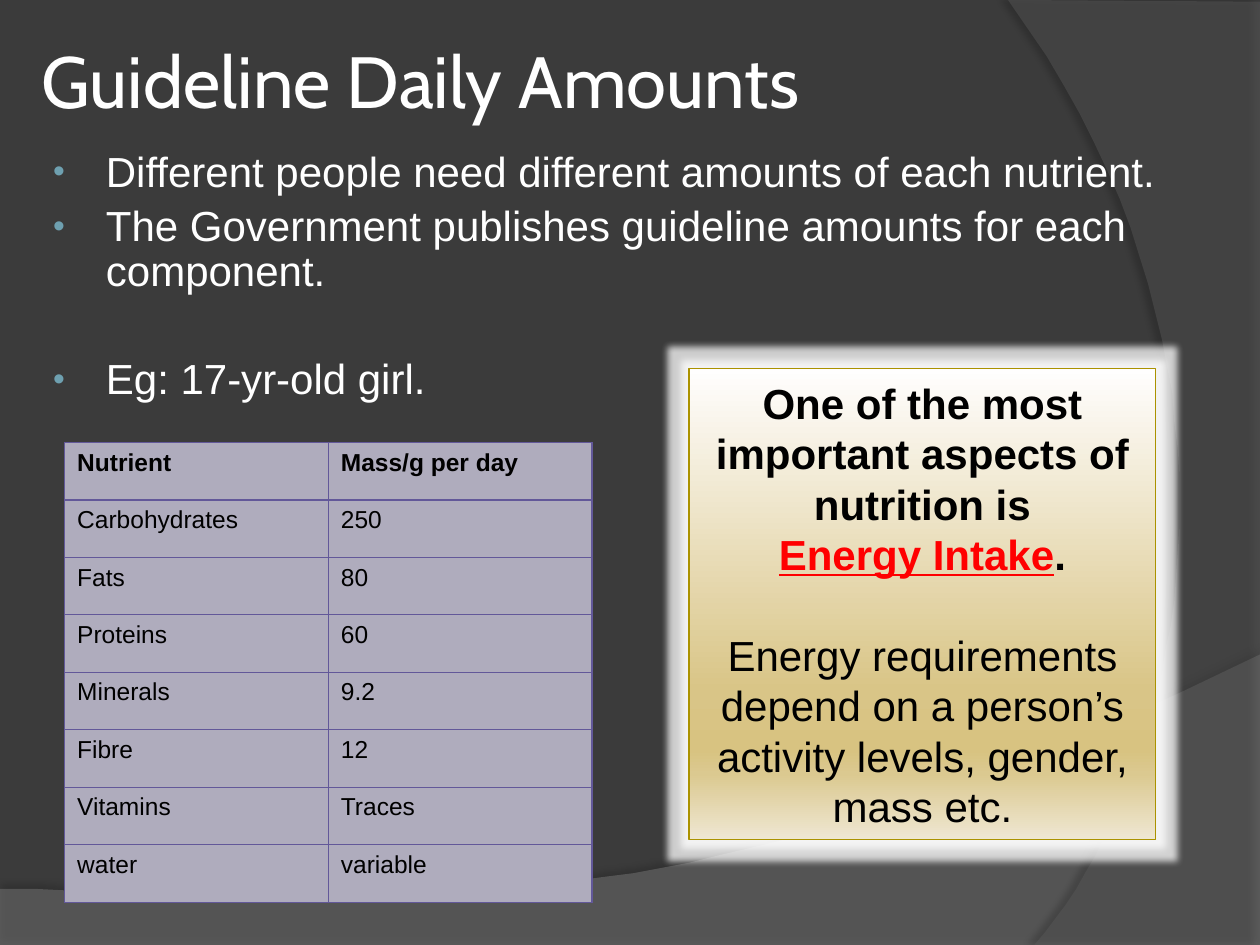
from lxml.etree import SubElement
from pptx import Presentation
from pptx.dml.color import RGBColor
from pptx.enum.shapes import MSO_SHAPE
from pptx.enum.text import MSO_ANCHOR, MSO_AUTO_SIZE, PP_ALIGN
from pptx.oxml import parse_xml
from pptx.oxml.ns import nsdecls, qn
from pptx.util import Pt


def color(value):
    return RGBColor.from_string(value)


def add_span(para, text, **formats):
    """Add a run; formats are font attributes, with ink as its colour."""
    span = para.add_run()
    span.text = text
    span.font.color.rgb = color(formats.pop("ink"))
    for name, value in ({"name": "Arial", "size": Pt(24)} | formats).items():
        setattr(span.font, name, value)


deck = Presentation()
deck.slide_width, deck.slide_height = Pt(720), Pt(540)
page = deck.slides.add_slide(deck.slide_layouts[1])
page.background.fill.solid()
page.background.fill.fore_color.rgb = color("3B3B3B")

# Background swooshes: start, two control points and end of the curve, then corners
swooshes = [
    ([(720, 374.4), (402.5, 524.9), (281.5, 517.7), (0, 507.6)],
     [(0, 540), (720, 540)], "7F7F7F", 45, (35, 3.5, 270)),
    ([(591, 540), (673.2, 445.7), (733, 216), (576, 0)],
     [(720, 1.4), (720, 540)], "5E5E5E", 40, (45, 4, 180)),
]
steps = 40
for index, (controls, corners, fill, opacity, shadow) in enumerate(swooshes):
    curve = []
    for step in range(steps + 1):
        t = step / steps
        weights = [(1 - t) ** 3, 3 * t * (1 - t) ** 2, 3 * t * t * (1 - t), t ** 3]
        curve.append([sum(w * point[axis] for w, point in zip(weights, controls))
                      for axis in (0, 1)])
    builder = page.shapes.build_freeform(*curve[0], scale=Pt(1))
    builder.add_line_segments(curve[1:] + corners, close=True)
    swoosh = builder.convert_to_shape()
    swoosh.fill.solid()
    swoosh.fill.fore_color.rgb = color(fill)
    swoosh.line.fill.background()
    tint = swoosh._element.spPr.find(qn("a:solidFill"))[0]
    SubElement(tint, qn("a:alpha"), val=str(opacity * 1000))
    shade, distance, angle = shadow
    swoosh._element.spPr.append(parse_xml(
        f'<a:effectLst {nsdecls("a")}><a:outerShdw blurRad="{Pt(4)}" '
        f'dist="{Pt(distance)}" dir="{angle * 60000}"><a:srgbClr val="000000">'
        f'<a:alpha val="{shade * 1000}"/></a:srgbClr></a:outerShdw></a:effectLst>'))
    page.shapes._spTree.insert(2 + index, swoosh._element)

# Title and list placeholders
title, body = page.shapes.title, page.placeholders[1]
for holder, top, height in ((title, 15.1, 61.2), (body, 82.8, 442)):
    holder.left, holder.top, holder.width, holder.height = map(
        Pt, (20.2, top, 680.4, height))
    holder.text_frame.word_wrap = True
    holder.text_frame.auto_size = MSO_AUTO_SIZE.NONE

frame = title.text_frame
frame.vertical_anchor = MSO_ANCHOR.MIDDLE
for side in ("left", "top", "right", "bottom"):
    setattr(frame, f"margin_{side}", Pt(3.6))
frame.paragraphs[0].alignment = PP_ALIGN.LEFT
add_span(frame.paragraphs[0], "Guideline Daily Amounts",
         name="Cabin", size=Pt(41.4), ink="FFFFFF")

points = [
    ("Different people need different amounts of each nutrient.", 5),
    ("The Government publishes guideline amounts for each component.", 5),
    ("Eg: 17-yr-old girl.", 35.8),
]
frame = body.text_frame
for index, (text, gap) in enumerate(points):
    para = frame.add_paragraph() if index else frame.paragraphs[0]
    para.line_spacing, para.space_before = 0.9, Pt(gap)
    add_span(para, text, ink="FFFFFF")
    layout = para._p.get_or_add_pPr()
    layout.set("marL", str(Pt(33.1)))
    layout.set("indent", str(Pt(-30.2)))
    SubElement(SubElement(layout, qn("a:buClr")), qn("a:srgbClr"), val="6EA0B0")
    SubElement(layout, qn("a:buSzPct"), val="80000")
    SubElement(layout, qn("a:buFont"), typeface="Arial")
    SubElement(layout, qn("a:buChar"), char="•")

# Table of daily amounts
amounts = [
    ("Nutrient", "Mass/g per day"), ("Carbohydrates", "250"), ("Fats", "80"),
    ("Proteins", "60"), ("Minerals", "9.2"), ("Fibre", "12"),
    ("Vitamins", "Traces"), ("water", "variable"),
]
table = page.shapes.add_table(len(amounts), 2, Pt(36.9), Pt(252.9),
                              Pt(301.4), Pt(262.8)).table
for row, values in enumerate(amounts):
    for column, text in enumerate(values):
        cell = table.cell(row, column)
        cell.fill.solid()
        cell.fill.fore_color.rgb = color("AFACBD")
        add_span(cell.text_frame.paragraphs[0], text, size=Pt(14),
                 bold=row == 0, ink="000000")
        for order, edge in enumerate(("lnL", "lnR", "lnT", "lnB")):
            cell._tc.get_or_add_tcPr().insert(order, parse_xml(
                f'<a:{edge} {nsdecls("a")} w="{Pt(0.75)}"><a:solidFill>'
                f'<a:srgbClr val="625899"/></a:solidFill></a:{edge}>'))

# Glowing box on energy intake
box = page.shapes.add_shape(MSO_SHAPE.RECTANGLE, Pt(393.8), Pt(210.6),
                            Pt(266.6), Pt(269.2))
box.fill.gradient()
box.fill.gradient_angle = 270
stops = box._element.spPr.find(qn("a:gradFill")).find(qn("a:gsLst"))
for stop in list(stops):
    stops.remove(stop)
for place, shade in ((0, "FFFEFE"), (68, "D9C587"), (81, "D8C381"),
                     (86, "DBC990"), (100, "EFE7D3")):
    stop = SubElement(stops, qn("a:gs"), pos=str(place * 1000))
    SubElement(stop, qn("a:srgbClr"), val=shade)
box.line.color.rgb = color("AB9200")
box.line.width = Pt(0.75)
box._element.spPr.append(parse_xml(
    f'<a:effectLst {nsdecls("a")}><a:glow rad="{Pt(8)}"><a:srgbClr val="FFFFFF">'
    '<a:alpha val="75000"/></a:srgbClr></a:glow></a:effectLst>'))

messages = [
    (0, [("One of the most important aspects of nutrition is",
          {"bold": True, "ink": "000000"})]),
    (0, [("Energy Intake", {"bold": True, "underline": True, "ink": "FF0000"}),
         (".", {"bold": True, "ink": "000000"})]),
    (28.8, [("Energy requirements depend on a person’s activity levels, "
             "gender, mass etc.", {"ink": "000000"})]),
]
frame = box.text_frame
frame.word_wrap = True
frame.vertical_anchor = MSO_ANCHOR.MIDDLE
for index, (gap, spans) in enumerate(messages):
    para = frame.add_paragraph() if index else frame.paragraphs[0]
    para.alignment, para.space_before = PP_ALIGN.CENTER, Pt(gap)
    for text, formats in spans:
        add_span(para, text, **formats)

deck.save("out.pptx")
